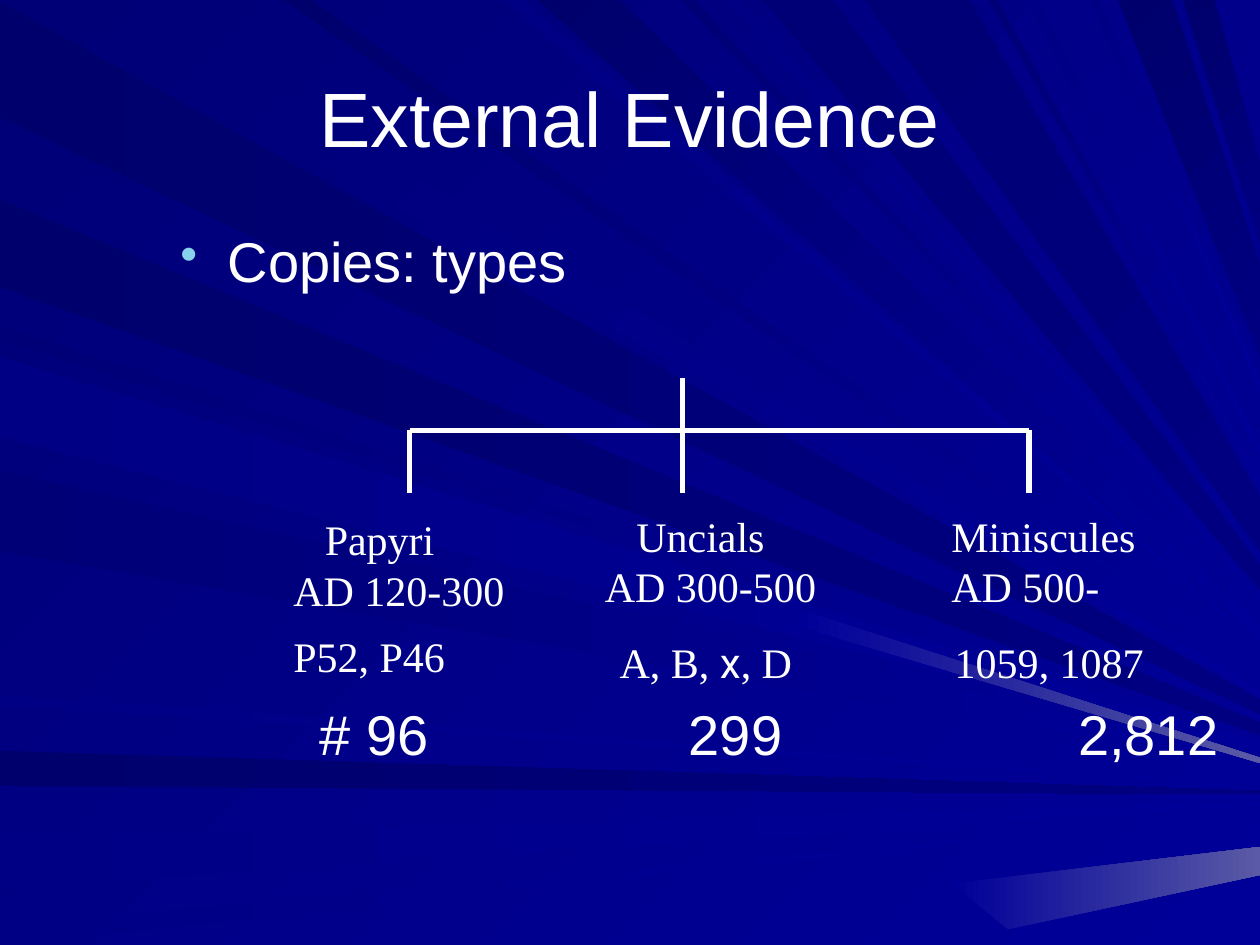
from lxml import etree
from pptx import Presentation
from pptx import util as u
from pptx.dml.color import RGBColor
from pptx.enum import shapes, text
from pptx.oxml import ns

Pt = u.Pt

THEME = {
    "white": "FFFFFF", "bullet": "86D1EC", "glow": "5A5AA6",
    "night": "00006D", "navy": "000076", "royal": "000085", "dusk": "000080", "blue": "000099",
    "title": {"name": "Arial", "size": Pt(44)},
    "body": {"name": "Arial", "size": Pt(32)},
    "label": {"name": "Times New Roman", "size": Pt(24)},
    "symbol": {"name": "Roboto", "size": Pt(24)},
    "line": Pt(3),
}
WIDTH, HEIGHT = 720, 540

# Rays run from a stretch of the left or top edge towards one point beyond the right edge
FOCUS = (820, 455)
LEFT_RAYS = [
    ("night", "dusk", 1, 67), ("night", "dusk", 114, 164), ("navy", "blue", 186, 194),
    ("royal", "blue", 204, 250), ("navy", "blue", 269, 315), ("royal", "blue", 397, 403),
    ("night", "dusk", 429, 449), ("royal", "blue", 479, 507), ("royal", "blue", 529, 540),
]
TOP_RAYS = [
    ("navy", "blue", 19, 73), ("night", "blue", 162, 178), ("royal", "blue", 287, 300),
    ("night", "blue", 307, 354), ("navy", "blue", 389, 397), ("royal", "blue", 415, 423),
    ("navy", "dusk", 436, 476), ("navy", "dusk", 494, 554), ("navy", "blue", 565, 570),
    ("royal", "blue", 587, 593), ("royal", "blue", 623, 628), ("night", "dusk", 639, 670),
    ("night", "dusk", 676, 694),
]
GLOWS = [
    [(456, 358), (459, 349), (WIDTH, 433), (WIDTH, 436)],
    [(544, 505), (WIDTH, 484), (WIDTH, 500), (576, 531)],
]

# Boxes are left, top, width, height
TITLE = ("External Evidence", (36, 21.6, 648, 90))
BULLET = ("Copies: types", (96, 126, 612, 54))
BULLET_INDENT = 27
NAME_INDENT = 18  # centres a short name over its dates

TYPES = [
    {"name": "Papyri", "dates": "AD 120-300", "indent": NAME_INDENT, "box": (160.5, 290, 135, 65),
     "examples": [("P52, P46", "label")], "examples_box": (160.5, 357, 101.5, 36),
     "count": "# 96", "count_left": 175.5},
    {"name": "Uncials", "dates": "AD 300-500", "indent": NAME_INDENT, "box": (338.5, 288, 135, 65),
     "examples": [("A, B, ", "label"), ("x", "symbol"), (", D", "label")],
     "examples_box": (347, 360, 113, 36), "count": "299", "count_left": 386.5},
    {"name": "Miniscules", "dates": "AD 500-", "indent": 0, "box": (536.5, 288, 126, 65),
     "examples": [("1059, 1087", "label")], "examples_box": (538.5, 360, 122.5, 36),
     "count": "2,812", "count_left": 609},
]
COUNT_TOP, COUNT_SIZE = 396, (100, 44)

BRANCHES = (234, 390, 588)
TRUNK, TREE_TOP, TREE_BAR, TREE_FOOT = 390, 216, 246, 282


def rgb(name):
    return RGBColor.from_string(THEME[name])


def paint(fill, first, last, angle):
    """Fill with a gradient at a clockwise angle."""
    fill.gradient()
    fill.gradient_angle = (360 - angle) % 360
    for stop, colour in zip(fill.gradient_stops, (first, last)):
        stop.color.rgb = rgb(colour)


def add_patch(slide, first, last, angle, corners):
    builder = slide.shapes.build_freeform(*corners[0], scale=Pt(1))
    builder.add_line_segments(corners[1:], close=True)
    shape = builder.convert_to_shape()
    shape.shadow.inherit = False
    shape.line.fill.background()
    paint(shape.fill, first, last, angle)


def at_right_edge(start):
    """Where the line from start to the focus leaves the slide."""
    (x, y), (focus_x, focus_y) = start, FOCUS
    return WIDTH, y + (focus_y - y) * (WIDTH - x) / (focus_x - x)


def add_ray(slide, first, last, angle, start, end):
    add_patch(slide, first, last, angle, [start, at_right_edge(start), at_right_edge(end), end])


def add_text(slide, box, paragraphs, wrap=False, anchor=text.MSO_ANCHOR.TOP):
    """Add a box; each paragraph is a list of (words, theme style) runs."""
    frame = slide.shapes.add_textbox(*map(Pt, box)).text_frame
    frame.word_wrap, frame.vertical_anchor = wrap, anchor
    for index, runs in enumerate(paragraphs):
        paragraph = frame.add_paragraph() if index else frame.paragraphs[0]
        for words, style in runs:
            run = paragraph.add_run()
            run.text = words
            run.font.color.rgb = rgb("white")
            for key, value in THEME[style].items():
                setattr(run.font, key, value)
    return frame.paragraphs[0]


def set_indent(paragraph, left, first=0):
    properties = paragraph._p.get_or_add_pPr()
    properties.set("marL", str(Pt(left)))
    properties.set("indent", str(Pt(first)))
    return properties


def add_bullet(paragraph):
    properties = set_indent(paragraph, BULLET_INDENT, -BULLET_INDENT)
    colour = etree.SubElement(properties, ns.qn("a:buClr"))
    etree.SubElement(colour, ns.qn("a:srgbClr"), val=THEME["bullet"])
    etree.SubElement(properties, ns.qn("a:buSzPct"), val="90000")
    etree.SubElement(properties, ns.qn("a:buChar"), char="•")


def add_line(slide, *ends):
    line = slide.shapes.add_connector(shapes.MSO_CONNECTOR.STRAIGHT, *map(Pt, ends))
    line.line.color.rgb = rgb("white")
    line.line.width = THEME["line"]
    etree.SubElement(line._element.spPr, ns.qn("a:effectLst"))


def main():
    presentation = Presentation()
    presentation.slide_width, presentation.slide_height = Pt(WIDTH), Pt(HEIGHT)
    slide = presentation.slides.add_slide(presentation.slide_layouts[6])
    paint(slide.background.fill, "navy", "blue", 45)
    for first, last, start, end in LEFT_RAYS:
        add_ray(slide, first, last, 0, (0, start), (0, end))
    for first, last, start, end in TOP_RAYS:
        add_ray(slide, first, last, 45, (start, 0), (end, 0))
    for corners in GLOWS:
        add_patch(slide, "blue", "glow", 0, corners)

    title, title_box = TITLE
    heading = add_text(slide, title_box, [[(title, "title")]], True, text.MSO_ANCHOR.MIDDLE)
    heading.alignment = text.PP_ALIGN.CENTER
    words, bullet_box = BULLET
    add_bullet(add_text(slide, bullet_box, [[(words, "body")]], True))

    add_line(slide, TRUNK, TREE_TOP, TRUNK, TREE_BAR)
    add_line(slide, BRANCHES[0], TREE_BAR, BRANCHES[-1], TREE_BAR)
    for x in BRANCHES:
        add_line(slide, x, TREE_BAR, x, TREE_FOOT)

    for kind in TYPES:
        label = [[(kind["name"], "label")], [(kind["dates"], "label")]]
        set_indent(add_text(slide, kind["box"], label), kind["indent"])
        add_text(slide, kind["examples_box"], [kind["examples"]])
        count_box = (kind["count_left"], COUNT_TOP, *COUNT_SIZE)
        add_text(slide, count_box, [[(kind["count"], "body")]], True)

    presentation.save("out.pptx")


if __name__ == "__main__":
    main()
